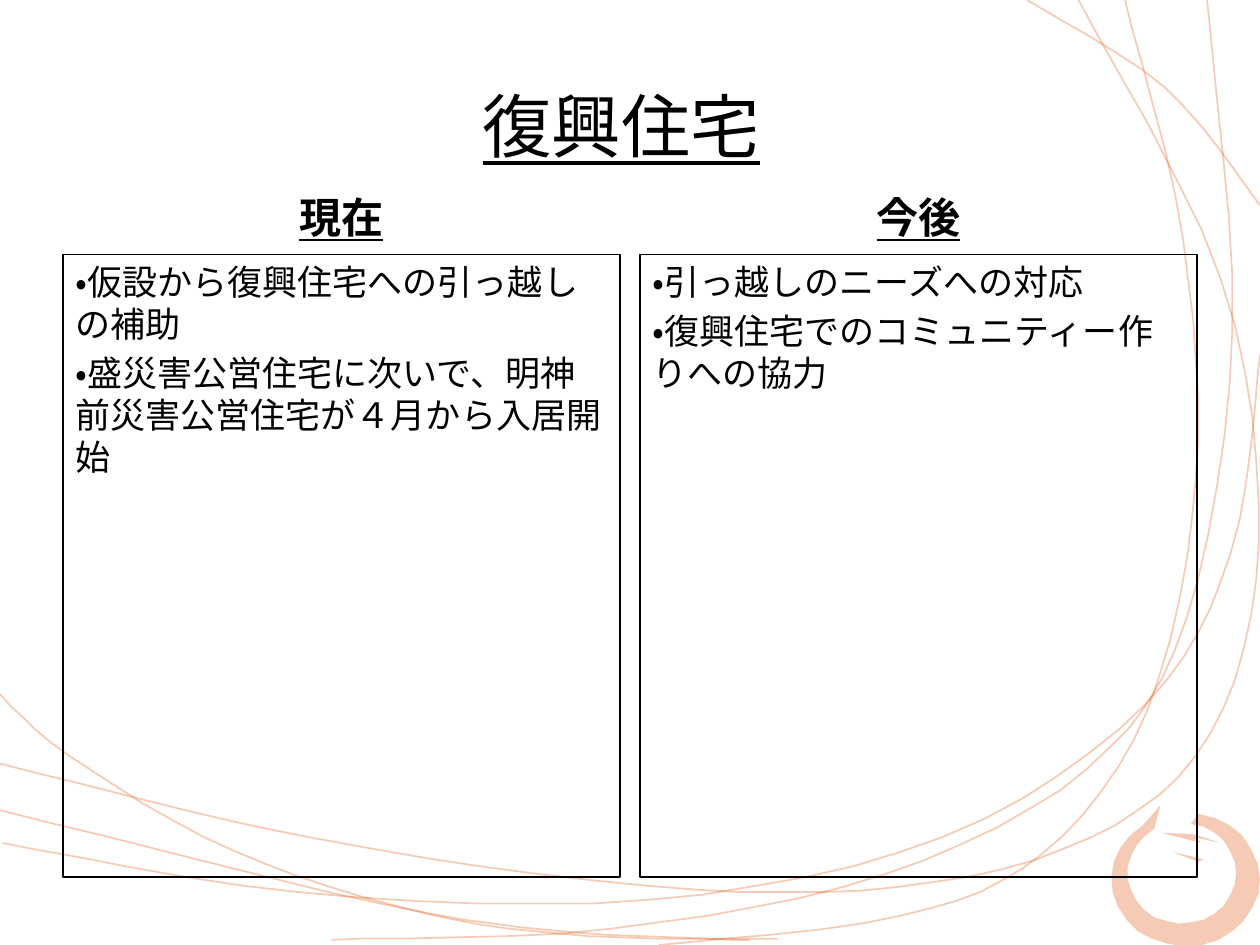
import math

from lxml import etree
from pptx import Presentation
from pptx import util as u
from pptx.dml.color import RGBColor
from pptx.enum import lang, shapes, text
from pptx.oxml import ns

PX = 9144  # EMU per px, 100 px to the inch
SLIDE_SIZE = (1000, 750)
FONT = "Calibri"
COLORS = {"text": "000000", "frame": "000000", "swirl": "E3560E"}

TITLE = "復興住宅"
COLUMNS = [
    ("現在", ["・仮設から復興住宅への引っ越しの補助",
            "・盛災害公営住宅に次いで、明神前災害公営住宅が４月から入居開始"]),
    ("今後", ["・引っ越しのニーズへの対応",
            "・復興住宅でのコミュニティー作りへの協力"]),
]
TITLE_BOX = (43, 68, 900, 62)
COLUMN_LEFT, COLUMN_WIDTH, COLUMN_GAP = 50, 442, 16
HEADING_TOP, HEADING_HEIGHT = 147, 50
BODY_TOP, BODY_HEIGHT = 202, 494

# Points that each swirl passes through
SWIRLS = [
    [(-3, 548), (55, 600), (185, 675), (338, 725), (467, 743), (617, 745)],
    [(523, 750), (714, 727), (828, 677), (911, 563), (949, 380), (939, 190), (893, 0)],
    [(0, 606), (248, 665), (514, 703), (712, 704), (865, 665), (960, 583), (999, 431),
     (969, 222), (856, 0)],
    [(2, 669), (237, 708), (516, 714), (749, 664), (908, 560), (977, 438), (1000, 282)],
    [(263, 746), (486, 737), (702, 694), (863, 610), (942, 490), (978, 263), (958, 0)],
    [(815, 0), (924, 69), (1000, 163)],
    [(0, 643), (306, 718), (456, 740), (595, 746)],
]
SWIRL_STEPS = 6
# Brush ring: centre x, centre y, radius x, radius y, first and last angle
RING_OUTER = (941, 698, 59, 53, -80, 235)
RING_INNER = (938, 693, 43, 40, 240, -80)
RING_TIP = (921, 639)
RING_STEPS = 24
STREAKS = [
    [(922, 661), (947, 662), (969, 669), (950, 665), (953, 669)],
    [(930, 676), (955, 682), (951, 684)],
]


def color(name):
    return RGBColor.from_string(COLORS[name])


def smooth(knots):
    """Return points on a Catmull-Rom curve through the knots."""
    padded = [knots[0], *knots, knots[-1]]
    points = [knots[0]]
    for a, b, c, d in zip(padded, padded[1:], padded[2:], padded[3:]):
        for step in range(1, SWIRL_STEPS + 1):
            t = step / SWIRL_STEPS
            points.append(tuple(
                q + t / 2 * (r - p + t * (2 * p - 5 * q + 4 * r - s
                                          + t * (3 * (q - r) + s - p)))
                for p, q, r, s in zip(a, b, c, d)))
    return points


def arc(center_x, center_y, radius_x, radius_y, first, last):
    angles = [math.radians(first + (last - first) * step / RING_STEPS)
              for step in range(RING_STEPS + 1)]
    return [(center_x + radius_x * math.cos(angle), center_y + radius_y * math.sin(angle))
            for angle in angles]


def paint_swirl(fill, opacity):
    """Give a fill the swirl colour at an opacity in percent."""
    fill.solid()
    fill.fore_color.rgb = color("swirl")
    for element in fill._xPr.iter(ns.qn("a:srgbClr")):
        etree.SubElement(element, ns.qn("a:alpha"), val=str(opacity * 1000))


def add_outline(slide, points, closed):
    builder = slide.shapes.build_freeform(*points[0], scale=PX)
    builder.add_line_segments(points[1:], close=closed)
    shape = builder.convert_to_shape()
    shape.shadow.inherit = False
    if closed:
        shape.line.fill.background()
        paint_swirl(shape.fill, 30)
    else:
        shape.fill.background()
        shape.line.width = u.Pt(1)
        paint_swirl(shape.line.fill, 29)


def write(shape, paragraphs, size, bold=False, underline=False, gap=0,
          align=text.PP_ALIGN.LEFT, anchor=text.MSO_ANCHOR.TOP):
    frame = shape.text_frame
    frame.word_wrap = True
    frame.auto_size = text.MSO_AUTO_SIZE.NONE
    frame.vertical_anchor = anchor
    for index, line in enumerate(paragraphs):
        paragraph = frame.add_paragraph() if index else frame.paragraphs[0]
        paragraph.alignment = align
        if index:
            paragraph.space_before = u.Pt(gap)
        run = paragraph.add_run()
        run.text = line
        font = run.font
        font.name, font.size = FONT, u.Pt(size)
        font.bold, font.underline = bold, underline
        font.color.rgb = color("text")
        font.language_id = lang.MSO_LANGUAGE_ID.JAPANESE


def emu(*lengths):
    return [length * PX for length in lengths]


def main():
    presentation = Presentation()
    presentation.slide_width, presentation.slide_height = emu(*SLIDE_SIZE)
    slide = presentation.slides.add_slide(presentation.slide_layouts[5])

    for knots in SWIRLS:
        add_outline(slide, smooth(knots), closed=False)
    ring = [*arc(*RING_OUTER), RING_TIP, *arc(*RING_INNER)]
    for points in [ring, *STREAKS]:
        add_outline(slide, points, closed=True)

    title = slide.shapes.title
    title.left, title.top, title.width, title.height = emu(*TITLE_BOX)
    write(title, [TITLE], 39.6, underline=True,
          align=text.PP_ALIGN.CENTER, anchor=text.MSO_ANCHOR.MIDDLE)

    for index, (heading, items) in enumerate(COLUMNS):
        left = COLUMN_LEFT + index * (COLUMN_WIDTH + COLUMN_GAP)
        heading_box = slide.shapes.add_textbox(
            *emu(left, HEADING_TOP, COLUMN_WIDTH, HEADING_HEIGHT))
        write(heading_box, [heading], 24, bold=True, underline=True,
              align=text.PP_ALIGN.CENTER, anchor=text.MSO_ANCHOR.BOTTOM)
        body = slide.shapes.add_shape(
            shapes.MSO_SHAPE.RECTANGLE, *emu(left, BODY_TOP, COLUMN_WIDTH, BODY_HEIGHT))
        body.shadow.inherit = False
        body.fill.background()
        body.line.color.rgb = color("frame")
        body.line.width = u.Pt(0.75)
        write(body, items, 20, gap=4)

    presentation.save("out.pptx")


if __name__ == "__main__":
    main()
